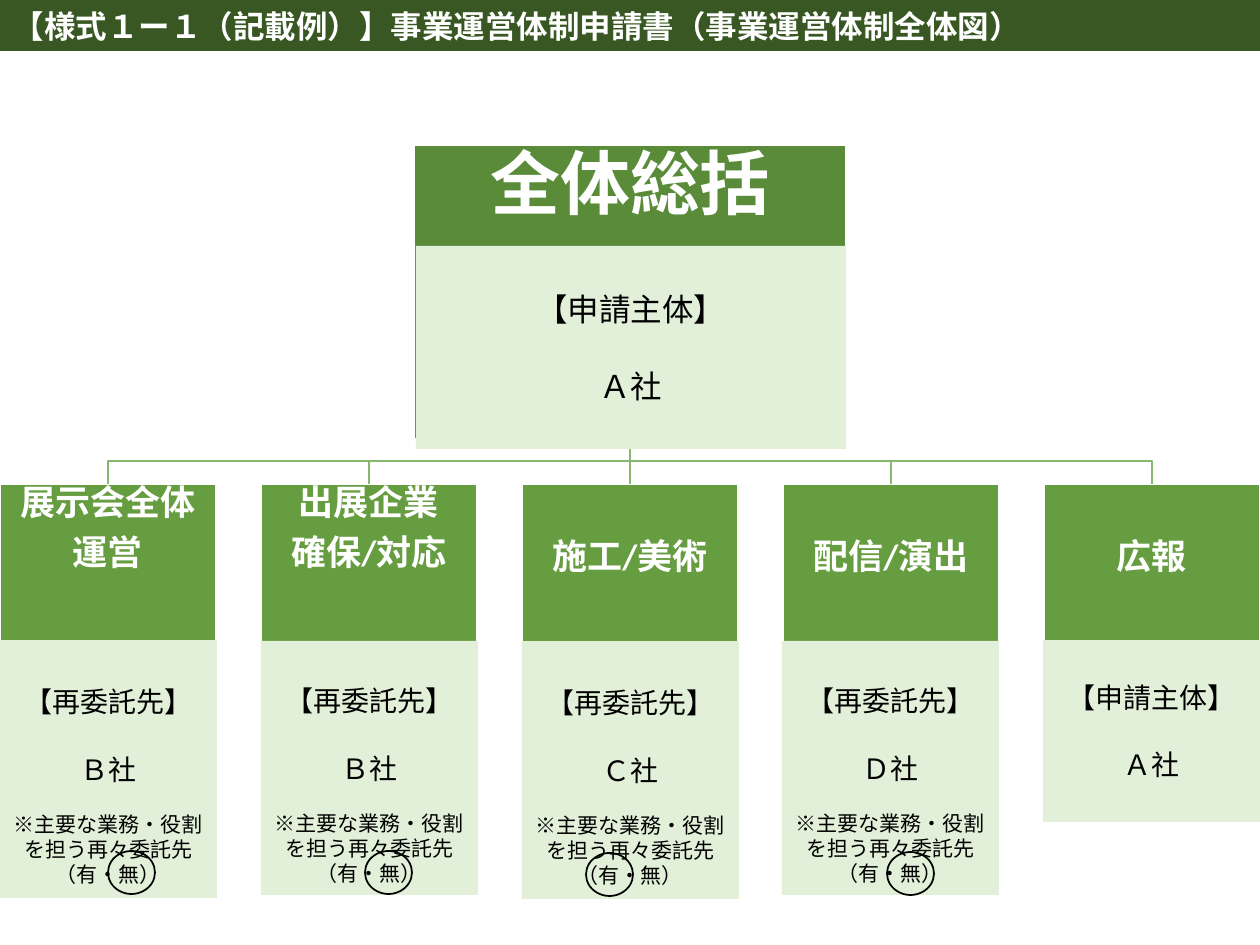
from dataclasses import dataclass

from lxml import etree
from pptx import Presentation
from pptx.dml.color import RGBColor
from pptx.enum.shapes import MSO_CONNECTOR, MSO_SHAPE
from pptx.enum.text import MSO_ANCHOR, MSO_AUTO_SIZE, PP_ALIGN
from pptx.oxml.ns import qn
from pptx.util import Emu, Pt

RECTANGLE, OVAL = MSO_SHAPE.RECTANGLE, MSO_SHAPE.OVAL
STRAIGHT = MSO_CONNECTOR.STRAIGHT
TOP, MIDDLE = MSO_ANCHOR.TOP, MSO_ANCHOR.MIDDLE
LEFT, CENTER = PP_ALIGN.LEFT, PP_ALIGN.CENTER
BOTTOM_SITE, TOP_SITE = 2, 0

EMU_PER_PX = 914400 / 126
FONT = "Calibri"
COLORS = {
    "title": "385723",
    "root": "5A8B39",
    "department": "669D40",
    "panel": "E2F0D9",
    "branch": "88B76F",
    "white": "FFFFFF",
    "black": "000000",
}


@dataclass(frozen=True)
class Box:
    left: int
    top: int
    width: int
    height: int

    @property
    def center(self) -> int:
        return self.left + self.width // 2

    def emu(self) -> list[Emu]:
        return [px(n) for n in (self.left, self.top, self.width, self.height)]


@dataclass(frozen=True)
class Line:
    text: str
    size: int
    before: float = 0
    after: float = 0
    spacing: float = 1.0
    bold: bool = False
    color: str = "black"


@dataclass(frozen=True)
class Department:
    heading: tuple[str, ...]
    role: str
    company: str
    panel: Box
    circle: Box | None = None


ROOT = Box(414, 145, 432, 294)
ROOT_PANEL = Box(416, 246, 430, 203)
DEPARTMENT_TOP, DEPARTMENT_WIDTH, DEPARTMENT_HEIGHT, PITCH = 484, 216, 314, 261
BRANCH_Y = 461
SUBCONTRACTOR, APPLICANT = "【再委託先】", "【申請主体】"
NOTE, CHOICE = "※主要な業務・役割を担う再々委託先", "（有・無）"

DEPARTMENTS = [
    Department(("展示会全体", "運営"), SUBCONTRACTOR, "Ｂ社",
               Box(0, 640, 217, 258), Box(108, 851, 47, 43)),
    Department(("出展企業", "確保/対応"), SUBCONTRACTOR, "Ｂ社",
               Box(261, 641, 217, 254), Box(365, 851, 47, 43)),
    Department(("施工/美術",), SUBCONTRACTOR, "Ｃ社",
               Box(522, 641, 217, 258), Box(586, 853, 47, 43)),
    Department(("配信/演出",), SUBCONTRACTOR, "Ｄ社",
               Box(782, 641, 217, 254), Box(887, 852, 47, 43)),
    Department(("広報",), APPLICANT, "Ａ社", Box(1043, 640, 217, 182)),
]


def px(length: float) -> Emu:
    return Emu(round(length * EMU_PER_PX))


def rgb(name: str) -> RGBColor:
    return RGBColor.from_string(COLORS[name])


def set_line(shape, color: str | None) -> None:
    if color is None:
        shape.line.fill.background()
    else:
        shape.line.color.rgb = rgb(color)
        shape.line.width = Pt(1)


def add_shape(slide, kind, box: Box, fill: str | None, line: str | None):
    shape = slide.shapes.add_shape(kind, *box.emu())
    shape.shadow.inherit = False
    if fill is None:
        shape.fill.background()
    else:
        shape.fill.solid()
        shape.fill.fore_color.rgb = rgb(fill)
    set_line(shape, line)
    return shape


def write(shape, lines: list[Line], alignment=CENTER, **frame_format) -> None:
    frame = shape.text_frame
    settings = {"word_wrap": True, "auto_size": MSO_AUTO_SIZE.NONE, **frame_format}
    for name, value in settings.items():
        setattr(frame, name, value)
    for index, line in enumerate(lines):
        paragraph = frame.paragraphs[0] if index == 0 else frame.add_paragraph()
        paragraph_format = {
            "alignment": alignment,
            "line_spacing": line.spacing,
            "space_before": Pt(line.before),
            "space_after": Pt(line.after),
        }
        for name, value in paragraph_format.items():
            setattr(paragraph, name, value)
        run = paragraph.add_run()
        run.text = line.text
        font_format = {"name": FONT, "size": Pt(line.size), "bold": line.bold}
        for name, value in font_format.items():
            setattr(run.font, name, value)
        run.font.color.rgb = rgb(line.color)


def add_heading(slide, box: Box, fill: str, texts: tuple[str, ...], size: int,
                inset: int, top_inset: int):
    shape = add_shape(slide, RECTANGLE, box, fill, "white")
    lines = [Line(text, size, after=size * 0.35, spacing=0.9, bold=True, color="white")
             for text in texts]
    write(shape, lines, vertical_anchor=TOP, margin_left=px(inset),
          margin_right=px(inset), margin_top=px(top_inset), margin_bottom=px(inset))
    return shape


def add_panel(slide, box: Box, role: str, company: str, size: int, gap: float,
              with_note: bool = False) -> None:
    lines = [Line(role, size), Line(company, size, before=gap)]
    top_inset = 6
    if with_note:
        lines += [Line(NOTE, 12, before=14.5), Line(CHOICE, 12)]
        top_inset = 40
    shape = add_shape(slide, RECTANGLE, box, "panel", None)
    write(shape, lines, vertical_anchor=MIDDLE, margin_top=px(top_inset))


def add_branch(slide, root, head) -> None:
    """Join the root to a heading, straight when they share a centre."""
    start_x, start_y = ROOT.center, ROOT.top + ROOT.height
    end_x = round((head.left + head.width / 2) / EMU_PER_PX)
    if end_x == start_x:
        line = slide.shapes.add_connector(STRAIGHT, 0, 0, 0, 0)
        line.begin_connect(root, BOTTOM_SITE)
        line.end_connect(head, TOP_SITE)
        etree.SubElement(line._element.spPr, qn("a:effectLst"))
    else:
        builder = slide.shapes.build_freeform(start_x, start_y, EMU_PER_PX)
        builder.add_line_segments(
            [(start_x, BRANCH_Y), (end_x, BRANCH_Y), (end_x, DEPARTMENT_TOP)], close=False)
        line = builder.convert_to_shape()
        line.fill.background()
        line.shadow.inherit = False
    set_line(line, "branch")


def add_title(slide, text: str) -> None:
    title = slide.shapes.title
    title.left, title.top, title.width, title.height = Box(0, 0, 1260, 51).emu()
    title.fill.solid()
    title.fill.fore_color.rgb = rgb("title")
    write(title, [Line(text, 18, bold=True, color="white")], LEFT, vertical_anchor=MIDDLE)


def main() -> None:
    presentation = Presentation()
    presentation.slide_width, presentation.slide_height = px(1260), px(945)
    slide = presentation.slides.add_slide(presentation.slide_layouts[5])
    add_title(slide, "【様式１ー１（記載例）】事業運営体制申請書（事業運営体制全体図）")

    root = add_heading(slide, ROOT, "root", ("全体総括",), 40, 4, 4)
    for index, department in enumerate(DEPARTMENTS):
        box = Box(index * PITCH, DEPARTMENT_TOP, DEPARTMENT_WIDTH, DEPARTMENT_HEIGHT)
        top_inset = 1 if len(department.heading) > 1 else 55
        head = add_heading(slide, box, "department", department.heading, 20, 1, top_inset)
        add_branch(slide, root, head)
        add_panel(slide, department.panel, department.role, department.company, 16, 19.5,
                  with_note=department.circle is not None)
        if department.circle:
            add_shape(slide, OVAL, department.circle, None, "black")
    add_panel(slide, ROOT_PANEL, APPLICANT, "Ａ社", 18, 22)

    presentation.save("out.pptx")


if __name__ == "__main__":
    main()
